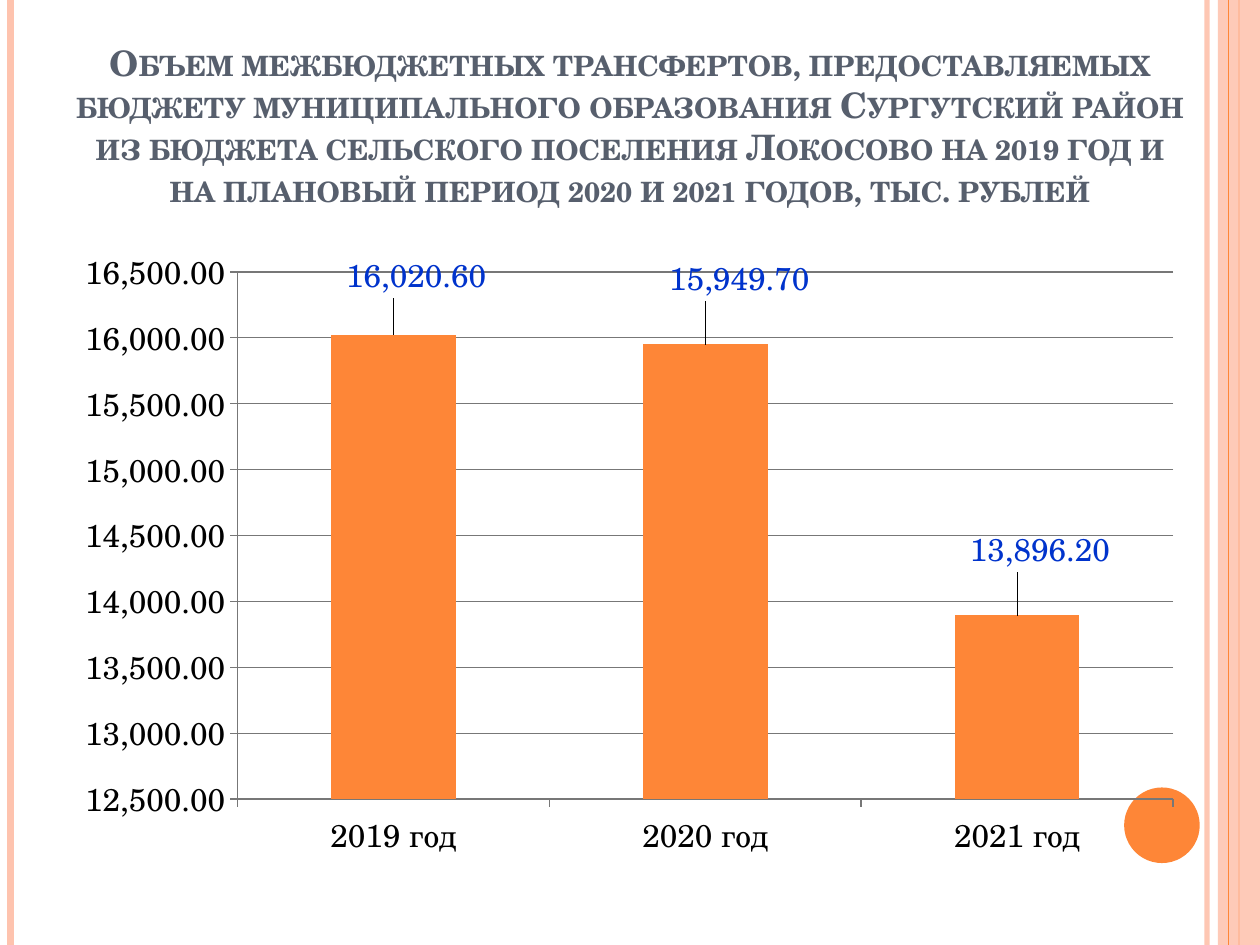
from dataclasses import dataclass
from typing import Any

import pptx
import pptx.chart.data
import pptx.dml.color
import pptx.enum.chart
import pptx.enum.shapes
import pptx.enum.text
import pptx.oxml
import pptx.oxml.ns
import pptx.util

Pt = pptx.util.Pt
RGB = pptx.dml.color.RGBColor.from_string
NUMBER_FORMAT = "#,##0.00"


@dataclass(frozen=True)
class Theme:
    accent: str = "FE8637"
    pale: str = "FEC3AE"
    heading: str = "575F6D"
    text: str = "000000"
    value: str = "0033CC"
    grid: str = "777777"
    font: str = "TeX Gyre Schola"
    heading_size: float = 20
    chart_size: float = 18


@dataclass(frozen=True)
class Stripe:
    x: float
    width: float
    color: str
    alpha: int = 100


@dataclass(frozen=True)
class Decoration:
    preset: Any
    left: float
    top: float
    width: float
    height: float
    color: str
    alpha: int = 100


@dataclass(frozen=True)
class YearVolume:
    year: str
    volume: float
    label_dx: float  # label shift, as a share of the chart
    label_dy: float


THEME = Theme()
WIDTH, HEIGHT = 720, 540
SHAPES = pptx.enum.shapes.MSO_SHAPE

OUTER_STRIPES = [
    Stripe(689.8, 3, THEME.pale, 93),
    Stripe(6, 4.5, THEME.pale),
    Stripe(708, 1.5, THEME.accent),
]
BAND = Decoration(SHAPES.RECTANGLE, 696, 0, 24, HEIGHT, THEME.pale, 87)
BAND_STRIPE = Stripe(702, 0.75, THEME.accent)
CIRCLE = Decoration(SHAPES.OVAL, 642.4, 450, 43.2, 43.2, THEME.accent)

HEADING = (
    "Объем межбюджетных трансфертов, предоставляемых бюджету муниципального "
    "образования Сургутский район из бюджета сельского поселения Локосово "
    "на 2019 год и на плановый период 2020 и 2021 годов, тыс. рублей"
)
VOLUMES = [
    YearVolume("2019 год", 16020.6, 0.02, -0.05),
    YearVolume("2020 год", 15949.7, 0.03, -0.06),
    YearVolume("2021 год", 13896.2, 0.02, -0.06),
]


def apply(target: Any, values: dict[str, Any]) -> None:
    for name, value in values.items():
        setattr(target, name, value)


def set_alpha(owner: Any, percent: int) -> None:
    if percent < 100:
        color = owner.xpath(".//a:solidFill/a:srgbClr")[0]
        alpha = color.makeelement(pptx.oxml.ns.qn("a:alpha"), {"val": str(percent * 1000)})
        color.append(alpha)


def draw_stripe(slide: Any, stripe: Stripe) -> None:
    line = slide.shapes.add_connector(
        pptx.enum.shapes.MSO_CONNECTOR.STRAIGHT, Pt(stripe.x), 0, Pt(stripe.x), Pt(HEIGHT)
    )
    line.line.width = Pt(stripe.width)
    line.line.color.rgb = RGB(stripe.color)
    properties = line._element.spPr
    set_alpha(properties, stripe.alpha)
    properties.append(properties.makeelement(pptx.oxml.ns.qn("a:effectLst"), {}))


def draw_decoration(slide: Any, item: Decoration) -> None:
    shape = slide.shapes.add_shape(
        item.preset, Pt(item.left), Pt(item.top), Pt(item.width), Pt(item.height)
    )
    shape.shadow.inherit = False
    shape.fill.solid()
    shape.fill.fore_color.rgb = RGB(item.color)
    shape.line.fill.background()
    set_alpha(shape._element.spPr, item.alpha)


def draw_heading(slide: Any) -> None:
    frame = slide.shapes.add_textbox(Pt(36), Pt(16.6), Pt(648), Pt(106.6)).text_frame
    apply(frame, {"word_wrap": True, "vertical_anchor": pptx.enum.text.MSO_ANCHOR.BOTTOM})
    paragraph = frame.paragraphs[0]
    paragraph.alignment = pptx.enum.text.PP_ALIGN.CENTER
    run = paragraph.add_run()
    run.text = HEADING
    apply(run.font, {"name": THEME.font, "size": Pt(THEME.heading_size), "bold": True})
    run.font.color.rgb = RGB(THEME.heading)
    run._r.get_or_add_rPr().set("cap", "small")


def manual_layout(inner: bool = False, **shares: float) -> Any:
    """Return a c:layout placing a chart part by shares of the chart size."""
    target = '<c:layoutTarget val="inner"/>' if inner else ""
    modes = '<c:xMode val="edge"/><c:yMode val="edge"/>' if inner else ""
    places = "".join(f'<c:{key} val="{share}"/>' for key, share in shares.items())
    return pptx.oxml.parse_xml(
        f'<c:layout {pptx.oxml.ns.nsdecls("c")}><c:manualLayout>'
        f"{target}{modes}{places}</c:manualLayout></c:layout>"
    )


def style_font(font: Any, color: str) -> None:
    apply(font, {"name": THEME.font, "size": Pt(THEME.chart_size), "bold": False})
    font.color.rgb = RGB(color)


def style_axis(axis: Any) -> None:
    axis.major_tick_mark = pptx.enum.chart.XL_TICK_MARK.OUTSIDE
    axis.format.line.color.rgb = RGB(THEME.grid)
    axis.format.line.width = Pt(1)


def label_columns(series: Any) -> None:
    outside = pptx.enum.chart.XL_LABEL_POSITION.OUTSIDE_END
    labels = series.data_labels
    apply(labels, {"show_value": True, "number_format": NUMBER_FORMAT,
                   "number_format_is_linked": False, "position": outside})
    style_font(labels.font, THEME.value)
    for index, item in enumerate(VOLUMES):
        label = series.points[index].data_label
        style_font(label.font, THEME.value)
        label.position = outside
        element = series._element.xpath(f'.//c:dLbl[c:idx/@val="{index}"]')[0]
        element.insert(1, manual_layout(x=item.label_dx, y=item.label_dy))
        element.insert(2, element.makeelement(
            pptx.oxml.ns.qn("c:numFmt"), {"formatCode": NUMBER_FORMAT, "sourceLinked": "0"}
        ))


def draw_volumes(slide: Any) -> None:
    data = pptx.chart.data.CategoryChartData(number_format=NUMBER_FORMAT)
    data.categories = [item.year for item in VOLUMES]
    data.add_series("Series 1", [item.volume for item in VOLUMES])
    chart = slide.shapes.add_chart(
        pptx.enum.chart.XL_CHART_TYPE.COLUMN_CLUSTERED,
        Pt(36), Pt(134.6), Pt(648), Pt(362.9), data,
    ).chart
    apply(chart, {"has_legend": False, "has_title": False})
    style_font(chart.font, THEME.text)

    style_axis(chart.category_axis)
    volumes = chart.value_axis
    style_axis(volumes)
    apply(volumes, {"minimum_scale": 12500, "maximum_scale": 16500,
                    "major_unit": 500, "has_major_gridlines": True})
    apply(volumes.tick_labels, {"number_format": NUMBER_FORMAT,
                                "number_format_is_linked": False})
    volumes.major_gridlines.format.line.color.rgb = RGB(THEME.grid)
    volumes.major_gridlines.format.line.width = Pt(1)

    plot = chart.plots[0]
    apply(plot, {"gap_width": 150, "vary_by_categories": False})
    columns = plot.series[0]
    columns.format.fill.solid()
    columns.format.fill.fore_color.rgb = RGB(THEME.accent)
    label_columns(columns)

    plot_area = chart._chartSpace.chart.plotArea
    for automatic in plot_area.xpath("./c:layout"):
        plot_area.remove(automatic)
    plot_area.insert(0, manual_layout(inner=True, x=0.154, y=0.057, w=0.825, h=0.831))


def main() -> None:
    deck = pptx.Presentation()
    apply(deck, {"slide_width": Pt(WIDTH), "slide_height": Pt(HEIGHT)})
    slide = deck.slides.add_slide(deck.slide_layouts[6])
    for stripe in OUTER_STRIPES:
        draw_stripe(slide, stripe)
    draw_decoration(slide, BAND)
    draw_stripe(slide, BAND_STRIPE)
    draw_decoration(slide, CIRCLE)
    draw_heading(slide)
    draw_volumes(slide)
    deck.save("out.pptx")


if __name__ == "__main__":
    main()
